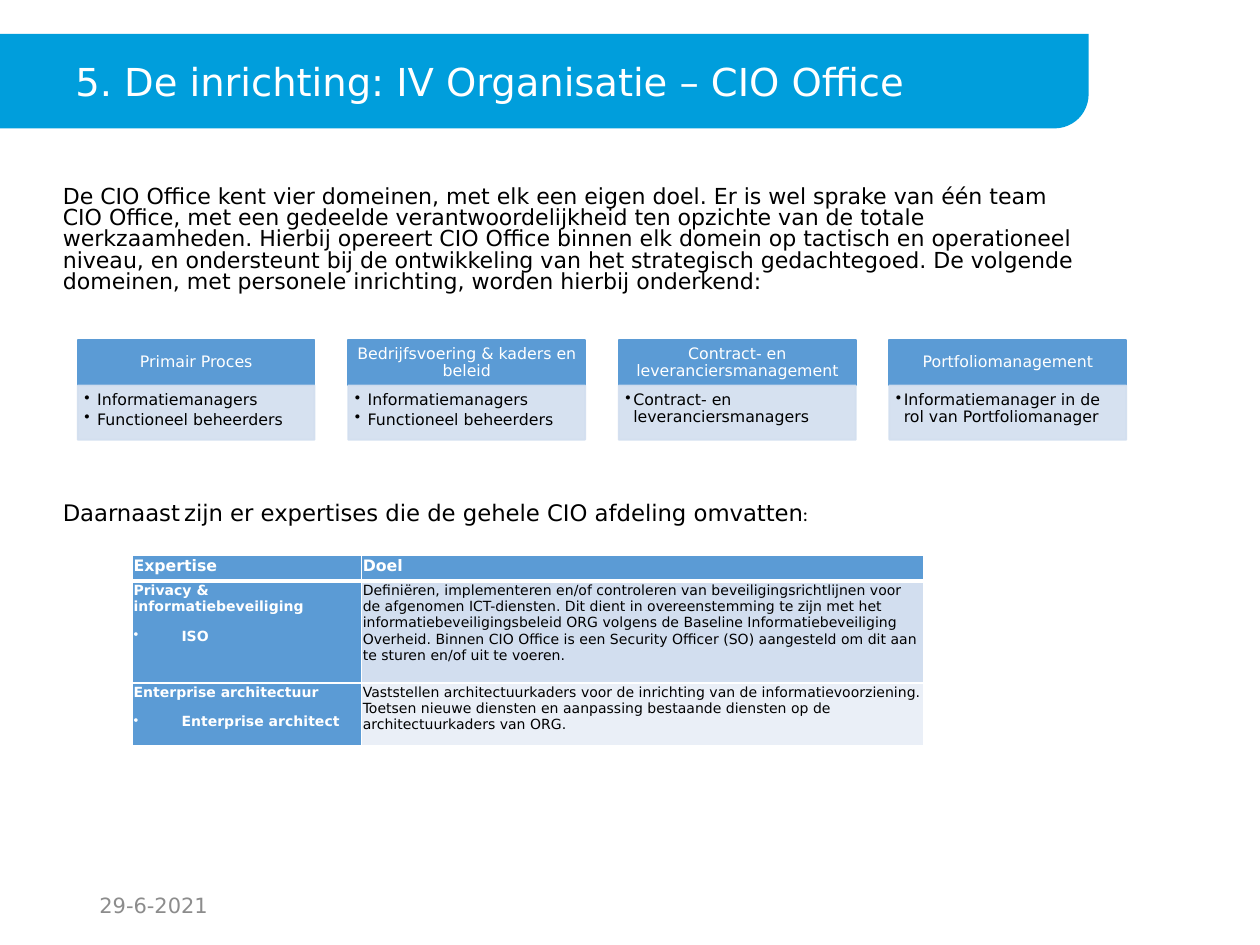
"""Build the slide on the layout of the CIO Office."""
from dataclasses import dataclass

from lxml import etree
from pptx import Presentation
from pptx.dml.color import RGBColor
from pptx.enum.shapes import MSO_SHAPE
from pptx.enum.text import MSO_ANCHOR, PP_ALIGN
from pptx.oxml.ns import qn
from pptx.util import Pt

RECT = MSO_SHAPE.RECTANGLE
ROUND = MSO_SHAPE.ROUND_1_RECTANGLE
TOP, MIDDLE = MSO_ANCHOR.TOP, MSO_ANCHOR.MIDDLE
LEFT, CENTER = PP_ALIGN.LEFT, PP_ALIGN.CENTER


@dataclass(frozen=True)
class Theme:
    font: str = "DejaVu Sans"
    alt: str = "Calibri"
    banner: str = "009EDC"
    blue: str = "5B9BD5"
    pale: str = "D2DEEF"
    light: str = "EAEFF7"
    white: str = "FFFFFF"
    black: str = "000000"
    grey: str = "8C8C8C"
    title: float = 22
    lead: float = 13
    intro: float = 12.6
    date: float = 12
    mark: float = 11
    small: float = 9
    cell: float = 8


T = Theme()

INTRO = (
    "De CIO Office kent vier domeinen, met elk een eigen doel. Er is wel sprake van één team "
    "CIO Office, met een gedeelde verantwoordelijkheid ten opzichte van de totale werkzaamheden. "
    "Hierbij opereert CIO Office binnen elk domein op tactisch en operationeel niveau, en "
    "ondersteunt bij de ontwikkeling van het strategisch gedachtegoed. De volgende domeinen, "
    "met personele inrichting, worden hierbij onderkend:"
)
STAFF = [" Informatiemanagers", " Functioneel beheerders"]
DOMAINS = [
    ("Primair Proces", STAFF),
    ("Bedrijfsvoering & kaders en beleid", STAFF),
    ("Contract- en leveranciersmanagement", ["Contract- en leveranciersmanagers"]),
    ("Portfoliomanagement", ["Informatiemanager in de rol van Portfoliomanager"]),
]
LEAD = [
    ("Daarnaast", T.lead, T.font),
    (" ", T.mark, T.alt),
    ("zijn er expertises die de gehele CIO afdeling omvatten", T.lead, T.font),
    (":", T.mark, T.alt),
]
SKILLS = [
    ("Privacy & informatiebeveiliging", "ISO",
     "Definiëren, implementeren en/of controleren van beveiligingsrichtlijnen voor de afgenomen "
     "ICT-diensten. Dit dient in overeenstemming te zijn met het informatiebeveiligingsbeleid ORG "
     "volgens de Baseline Informatiebeveiliging Overheid. Binnen CIO Office is een Security "
     "Officer (SO) aangesteld om dit aan te sturen en/of uit te voeren."),
    ("Enterprise architectuur", "Enterprise architect",
     "Vaststellen architectuurkaders voor de inrichting van de informatievoorziening. Toetsen "
     "nieuwe diensten en aanpassing bestaande diensten op de architectuurkaders van ORG."),
]


def rgb(color):
    return RGBColor.from_string(color)


def style(run, size, color, font=T.font, bold=False):
    run.font.size, run.font.name, run.font.bold = Pt(size), font, bold
    run.font.color.rgb = rgb(color)


def write(frame, lines, size, color, bold=False, align=LEFT, space=None, after=0):
    """Fill a frame with one paragraph per line and return the paragraphs."""
    frame.text = "\n".join(lines)
    for para in frame.paragraphs:
        para.alignment, para.line_spacing = align, space
        para.space_after = Pt(after)
        for run in para.runs:
            style(run, size, color, bold=bold)
    return frame.paragraphs


def indent(para, left, bullet=True):
    props = para._p.get_or_add_pPr()
    props.set("marL", str(Pt(left)))
    if bullet:
        props.set("indent", str(-Pt(left)))
        etree.SubElement(props, qn("a:buChar")).set("char", "•")


def inset(frame, left, top, right, bottom):
    frame.margin_left, frame.margin_top = Pt(left), Pt(top)
    frame.margin_right, frame.margin_bottom = Pt(right), Pt(bottom)


def box(slide, area, anchor=TOP):
    frame = slide.shapes.add_textbox(*map(Pt, area)).text_frame
    frame.word_wrap, frame.vertical_anchor = True, anchor
    return frame


def block(slide, kind, area, color, line=True, alpha=None):
    shape = slide.shapes.add_shape(kind, *map(Pt, area))
    shape.shadow.inherit = False
    shape.fill.solid()
    shape.fill.fore_color.rgb = rgb(color)
    if line:
        shape.line.color.rgb = rgb(color)
        shape.line.width = Pt(1)
    else:
        shape.line.fill.background()
    if alpha:
        for node in shape._element.spPr.iter(qn("a:srgbClr")):
            etree.SubElement(node, qn("a:alpha")).set("val", str(alpha * 1000))
    return shape


def banner(slide, text):
    shape = block(slide, ROUND, (0, 19.4, 622.1, 54), T.banner, line=False)
    shape.adjustments[0] = 0.36
    shape._element.spPr.xfrm.set("flipV", "1")
    para = write(box(slide, (0, 29.5, 586, 33.8)), [text], T.title, T.white)[0]
    indent(para, 36, bullet=False)


def domain(slide, left, name, roles):
    head = block(slide, RECT, (left, 194.4, 135.4, 25.9), T.blue).text_frame
    head.word_wrap, head.vertical_anchor = True, MIDDLE
    inset(head, 5, 2.9, 5, 2.9)
    write(head, [name], T.small, T.white, align=CENTER, space=0.9, after=3.15)
    body = block(slide, RECT, (left, 220.3, 135.4, 31), T.pale, alpha=90).text_frame
    body.word_wrap, body.vertical_anchor = True, TOP
    inset(body, 3.8, 3.8, 5, 5.7)
    for para in write(body, roles, T.small, T.black, space=0.9, after=1.35):
        indent(para, 4.5)


def edge(cell, side, width):
    line = etree.SubElement(cell._tc.get_or_add_tcPr(), qn("a:ln" + side), w=str(Pt(width)))
    fill = etree.SubElement(line, qn("a:solidFill"))
    etree.SubElement(fill, qn("a:srgbClr")).set("val", T.white)


def entry(cell, lines, size, fill, color, bold, base=1, top=1):
    """Format one table cell and return its paragraphs."""
    for side, width in zip("LRTB", (1, 1, top, base)):
        edge(cell, side, width)
    cell.fill.solid()
    cell.fill.fore_color.rgb = rgb(fill)
    inset(cell, 0.72, 0.72, 0.72, 0.72)
    return write(cell.text_frame, lines, size, color, bold, after=6)


def skills(slide):
    grid = slide.shapes.add_table(3, 2, Pt(75.6), Pt(317.5), Pt(452.2), Pt(108.7)).table
    for col, width in zip(grid.columns, (131, 321.2)):
        col.width = Pt(width)
    for row, height in zip(grid.rows, (14.4, 58.3, 36)):
        row.height = Pt(height)
    for col, name in enumerate(("Expertise", "Doel")):
        entry(grid.cell(0, col), [name], T.small, T.blue, T.white, True, base=3)
    for row, (name, role, goal) in enumerate(SKILLS, 1):
        top = 3 if row == 1 else 1
        item = entry(grid.cell(row, 0), [name, role], T.cell, T.blue, T.white, True, top=top)[1]
        item.line_spacing, item.space_after = Pt(11), Pt(0)
        indent(item, 27.4)
        fill = T.pale if row % 2 else T.light
        entry(grid.cell(row, 1), [goal], T.cell, fill, T.black, False, top=top)


def lead(slide):
    para = box(slide, (28.8, 281.5, 450.7, 23), MIDDLE).paragraphs[0]
    for text, size, font in LEAD:
        run = para.add_run()
        run.text = text
        style(run, size, T.black, font)


def main():
    deck = Presentation()
    deck.slide_width, deck.slide_height = Pt(720), Pt(540)
    slide = deck.slides.add_slide(deck.slide_layouts[6])
    banner(slide, "5. De inrichting: IV Organisatie – CIO Office")
    intro = box(slide, (28.8, 103.7, 601.2, 83.5))
    write(intro, [INTRO], T.intro, T.black, space=0.8)[0].space_before = Pt(6)
    write(box(slide, (49.7, 502.6, 162, 28.8), MIDDLE), ["29-6-2021"], T.date, T.grey)
    for place, (name, roles) in enumerate(DOMAINS):
        domain(slide, 44.4 + 154.6 * place, name, roles)
    skills(slide)
    lead(slide)
    deck.save("out.pptx")


if __name__ == "__main__":
    main()
